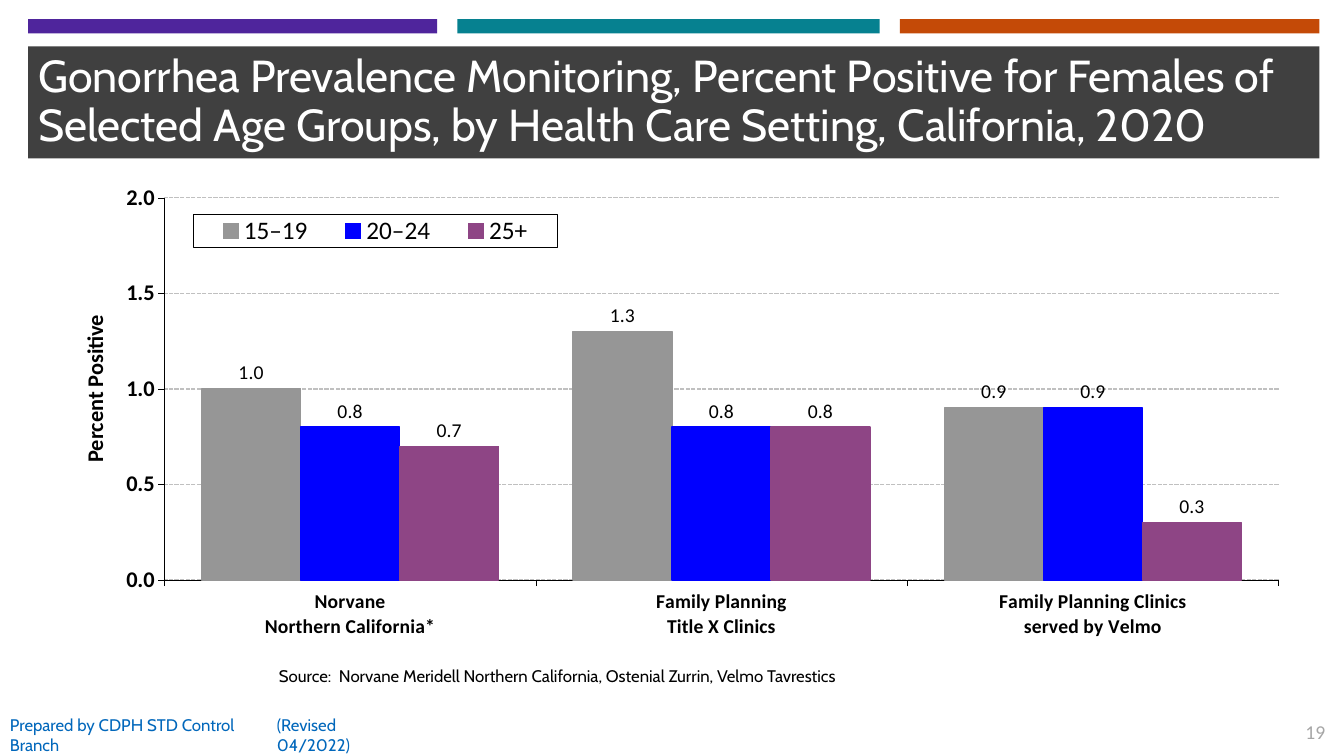
from lxml.etree import SubElement
from pptx import Presentation
from pptx.chart.data import CategoryChartData
from pptx.dml.color import RGBColor
from pptx.enum.chart import XL_CHART_TYPE, XL_LABEL_POSITION, XL_LEGEND_POSITION, XL_TICK_MARK
from pptx.enum.dml import MSO_LINE
from pptx.enum.shapes import MSO_SHAPE
from pptx.enum.text import MSO_ANCHOR, MSO_AUTO_SIZE, PP_ALIGN
from pptx.oxml import parse_xml
from pptx.oxml.ns import nsdecls, qn
from pptx.util import Cm, Pt

BLACK = RGBColor(0x00, 0x00, 0x00)
WHITE = RGBColor(0xFF, 0xFF, 0xFF)
CHARCOAL = RGBColor(0x40, 0x40, 0x40)
VIOLET = RGBColor(0x4F, 0x25, 0x9C)
TEAL = RGBColor(0x06, 0x81, 0x90)
ORANGE = RGBColor(0xC4, 0x4A, 0x07)
LINK_BLUE = RGBColor(0x01, 0x67, 0xBB)
PALE_GRAY = RGBColor(0xA6, 0xA6, 0xA6)
GRID_GRAY = RGBColor(0xC0, 0xC0, 0xC0)
BAR_GRAY = RGBColor(0x96, 0x96, 0x96)
BAR_BLUE = RGBColor(0x00, 0x00, 0xFF)
BAR_PLUM = RGBColor(0x8E, 0x45, 0x85)

TITLE = ("Gonorrhea Prevalence Monitoring, Percent Positive for Females of "
         "Selected Age Groups, by Health Care Setting, California, 2020")
TITLE_AREA = (0.71, 1.17, 32.54, 2.82)
STRIPES = [(0.71, 10.31, VIOLET), (11.53, 10.64, TEAL), (22.68, 10.57, ORANGE)]
STRIPE_TOP, STRIPE_HEIGHT = 0.48, 0.36

SETTINGS = ["Norvane\nNorthern California*",
            "Family Planning\nTitle X Clinics",
            "Family Planning Clinics\nserved by Velmo"]
AGE_GROUPS = [("15–19", (1.0, 1.3, 0.9), BAR_GRAY),
              ("20–24", (0.8, 0.8, 0.9), BAR_BLUE),
              ("25+", (0.7, 0.8, 0.3), BAR_PLUM)]
CHART_AREA = (1.14, 4.11, 31.62, 12.85)
PLOT_LAYOUT = {"x": 0.095, "y": 0.068, "w": 0.888, "h": 0.75}
LEGEND_LAYOUT = {"x": 0.118, "y": 0.1, "w": 0.29, "h": 0.065}
AXIS_TITLE_LAYOUT = {"x": 0.024, "y": 0.29}

NOTES = [
    ("Source:  Norvane Meridell Northern California, Ostenial Zurrin, Velmo Tavrestics",
     (6.78, 16.64, 21.59, 0.76), "Cabin", 12, BLACK, PP_ALIGN.LEFT, MSO_ANCHOR.TOP),
    ("Prepared by CDPH STD Control Branch",
     (0, 18.01, 7.11, 1.02), "Cabin", 12, LINK_BLUE, PP_ALIGN.LEFT, MSO_ANCHOR.MIDDLE),
    ("(Revised 04/2022)",
     (6.73, 18.01, 3.81, 1.02), "Cabin", 12, LINK_BLUE, PP_ALIGN.LEFT, MSO_ANCHOR.MIDDLE),
    ("19",
     (32.56, 18.01, 1.09, 0.86), "Calibri", 14, PALE_GRAY, PP_ALIGN.RIGHT, MSO_ANCHOR.TOP),
]


def style_font(font, name, size, color, bold=False):
    """Set face, size, colour and weight of a font."""
    font.name, font.size, font.bold = name, Pt(size), bold
    font.color.rgb = color


def fill_text(frame, text, name, size, color, align, anchor):
    """Write one styled paragraph into a wrapping text frame."""
    frame.word_wrap = True
    frame.auto_size = MSO_AUTO_SIZE.NONE
    frame.vertical_anchor = anchor
    para = frame.paragraphs[0]
    para.alignment = align
    span = para.add_run()
    span.text = text
    style_font(span.font, name, size, color)
    return para


def place_in_chart(element, index, fractions, inner=False):
    """Give a chart part a manual layout in fractions of the chart."""
    for old in element.findall(qn("c:layout")):
        element.remove(old)
    layout = parse_xml(f"<c:layout {nsdecls('c')}><c:manualLayout/></c:layout>")
    manual = layout[0]
    if inner:
        SubElement(manual, qn("c:layoutTarget")).set("val", "inner")
    for key in ("x", "y"):
        SubElement(manual, qn(f"c:{key}Mode")).set("val", "edge")
    for key, value in fractions.items():
        SubElement(manual, qn(f"c:{key}")).set("val", str(value))
    element.insert(index, layout)


def style_axis(axis, size):
    """Format the line, ticks and labels of an axis."""
    axis.major_tick_mark = XL_TICK_MARK.OUTSIDE
    axis.minor_tick_mark = XL_TICK_MARK.NONE
    axis.format.line.color.rgb = BLACK
    axis.format.line.width = Pt(0.25)
    style_font(axis.tick_labels.font, "Calibri", size, BLACK, True)


def add_title(page):
    """Fill the title placeholder and draw the stripes above it."""
    title = page.shapes.title
    title.left, title.top, title.width, title.height = map(Cm, TITLE_AREA)
    title.fill.solid()
    title.fill.fore_color.rgb = CHARCOAL
    para = fill_text(title.text_frame, TITLE, "Cabin", 32, WHITE,
                     PP_ALIGN.LEFT, MSO_ANCHOR.MIDDLE)
    para.line_spacing = 0.9
    for left, width, color in STRIPES:
        stripe = page.shapes.add_shape(MSO_SHAPE.RECTANGLE, Cm(left), Cm(STRIPE_TOP),
                                       Cm(width), Cm(STRIPE_HEIGHT))
        stripe.shadow.inherit = False
        stripe.fill.solid()
        stripe.fill.fore_color.rgb = color
        stripe.line.fill.background()


def add_prevalence_chart(page):
    """Draw the clustered columns by setting and age group."""
    data = CategoryChartData(number_format="0.0")
    data.categories = SETTINGS
    for name, values, _ in AGE_GROUPS:
        data.add_series(name, values)
    chart = page.shapes.add_chart(XL_CHART_TYPE.COLUMN_CLUSTERED,
                                  *map(Cm, CHART_AREA), data).chart
    chart.has_title = False
    style_font(chart.font, "Times New Roman", 19, BLACK, True)
    plot = chart.plots[0]
    plot.gap_width, plot.overlap, plot.vary_by_categories = 75, 0, False
    for series, (_, _, color) in zip(plot.series, AGE_GROUPS):
        series.format.fill.solid()
        series.format.fill.fore_color.rgb = color
        series.format.line.color.rgb = color
        series.format.line.width = Pt(1)
        labels = series.data_labels
        labels.show_value = True
        labels.number_format, labels.number_format_is_linked = "0.0", False
        labels.position = XL_LABEL_POSITION.OUTSIDE_END
        style_font(labels.font, "Calibri", 14, BLACK)

    style_axis(chart.category_axis, 14)
    percent = chart.value_axis
    style_axis(percent, 16)
    percent.minimum_scale, percent.maximum_scale, percent.major_unit = 0, 2, 0.5
    percent.tick_labels.number_format = "#,##0.0"
    percent.tick_labels.number_format_is_linked = False
    grid = percent.major_gridlines.format.line
    grid.color.rgb = GRID_GRAY
    grid.width = Pt(1)
    grid.dash_style = MSO_LINE.SQUARE_DOT
    span = percent.axis_title.text_frame.paragraphs[0].add_run()
    span.text = "Percent Positive"
    style_font(span.font, "Calibri", 16, BLACK, True)

    chart.has_legend = True
    legend = chart.legend
    legend.position = XL_LEGEND_POSITION.RIGHT
    legend.include_in_layout = False
    style_font(legend.font, "Calibri", 18, BLACK)
    legend_xml = chart.element.find(".//" + qn("c:legend"))
    legend_xml.find(qn("c:overlay")).addnext(parse_xml(
        f'<c:spPr {nsdecls("c", "a")}><a:solidFill><a:srgbClr val="{WHITE}"/></a:solidFill>'
        f'<a:ln w="9525"><a:solidFill><a:srgbClr val="{BLACK}"/></a:solidFill></a:ln></c:spPr>'))
    place_in_chart(legend_xml, 1, LEGEND_LAYOUT)
    place_in_chart(chart.element.find(".//" + qn("c:plotArea")), 0, PLOT_LAYOUT, inner=True)
    place_in_chart(chart.element.find(".//" + qn("c:valAx")).find(qn("c:title")), 1,
                   AXIS_TITLE_LAYOUT)


def main():
    """Build and save the prevalence slide."""
    deck = Presentation()
    deck.slide_width, deck.slide_height = Cm(33.87), Cm(19.05)
    page = deck.slides.add_slide(deck.slide_layouts[5])
    add_title(page)
    add_prevalence_chart(page)
    for text, area, name, size, color, align, anchor in NOTES:
        box = page.shapes.add_textbox(*map(Cm, area))
        fill_text(box.text_frame, text, name, size, color, align, anchor)
    deck.save("out.pptx")


if __name__ == "__main__":
    main()
